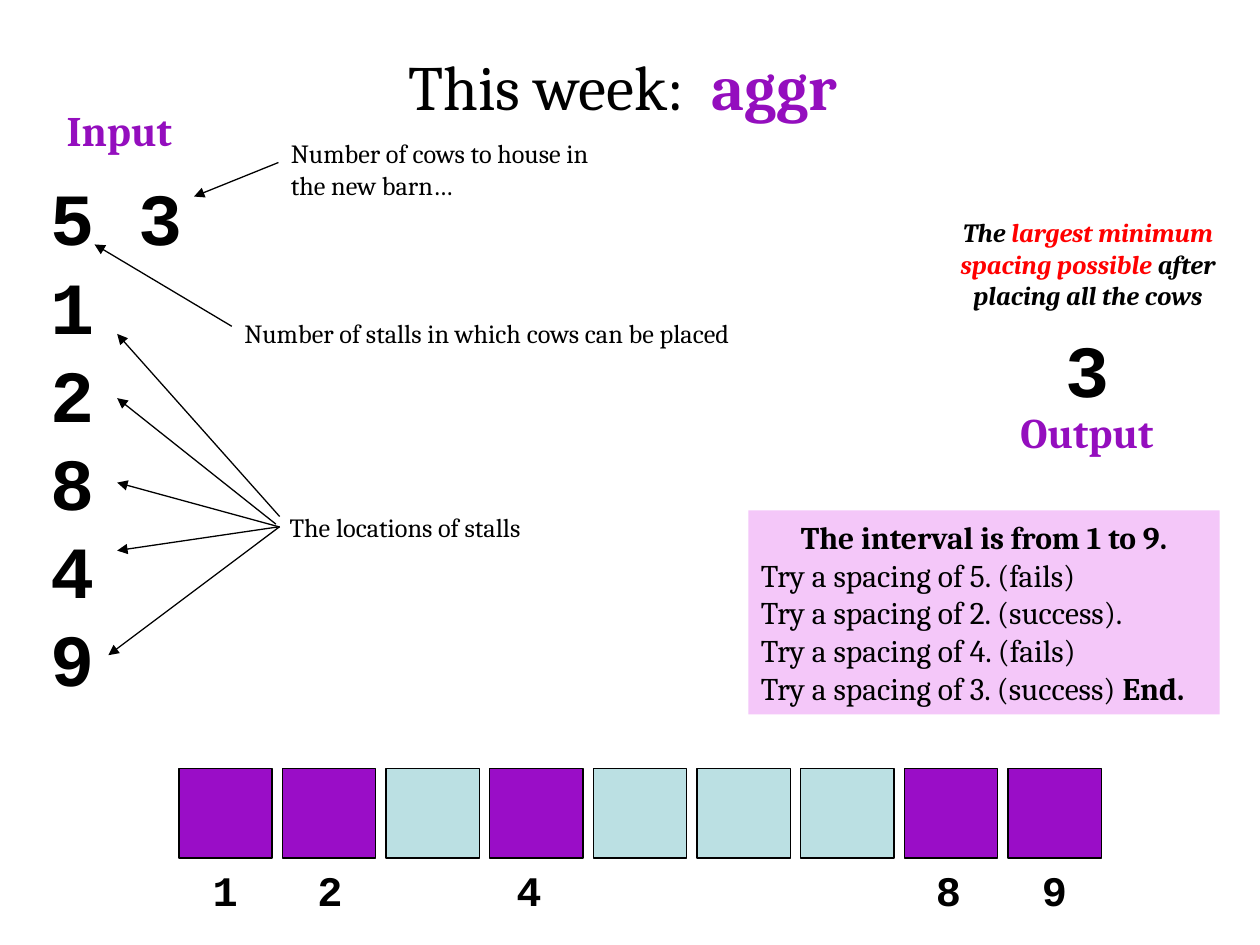
"""Build the slide that explains the aggr stall-spacing problem."""
from lxml import etree
from pptx import Presentation
from pptx.dml.color import RGBColor
from pptx.enum.shapes import MSO_CONNECTOR as Line, MSO_SHAPE as Shape
from pptx.enum.text import MSO_AUTO_SIZE as AutoSize, PP_ALIGN as Align
from pptx.oxml.ns import qn
from pptx.util import Inches, Pt

BLACK = RGBColor(0, 0, 0)
RED = RGBColor(0xFF, 0, 0)
PURPLE = RGBColor(0x94, 0x0E, 0xBE)
TAKEN = RGBColor(0x9A, 0x0D, 0xC7)
FREE = RGBColor(0xBB, 0xE0, 0xE3)
PINK = RGBColor(0xF4, 0xC7, 0xF9)

SERIF, MONO = "Cambria", "Courier New"
HEADING = dict(size=24, bold=True, color=PURPLE, wrap=False)
NUMBER = dict(size=42, bold=True, font=MONO, wrap=False)
STALL_NUMBER = dict(NUMBER, size=24)

TITLE = [["This week:  ", ("aggr", dict(bold=True, color=PURPLE))]]
INPUT = [[line] for line in ("5 3", "1", "2", "8", "4", "9")]
ANSWER = [["The ", ("largest minimum spacing possible ", dict(color=RED)),
           "after placing all the cows"]]
SEARCH = [
    [("The interval is from 1 to 9.", dict(bold=True))],
    ["Try a spacing of 5. (fails)"],
    ["Try a spacing of 2. (success)."],
    ["Try a spacing of 4. (fails)"],
    ["Try a spacing of 3. (success) ", ("End.", dict(bold=True))],
]
TEXTS = [
    (TITLE, (1.69, 0.33, 6.5, 0.7), dict(size=36, align=Align.CENTER)),
    ([["Input"]], (0.43, 0.78, 1.05, 0.5), HEADING),
    ([["Output"]], (8, 3.18, 1.29, 0.5), HEADING),
    (INPUT, (0.3, 1.32, 1.26, 4.34), NUMBER),
    ([["3"]], (8.36, 2.52, 0.55, 0.8), NUMBER),
    ([["Number of stalls in which cows can be placed"]],
     (1.84, 2.47, 4.35, 0.35), dict(wrap=False)),
    ([["The locations of stalls"]], (2.2, 4.01, 2.19, 0.35), dict(wrap=False)),
    ([["Number of cows to house in the new barn…"]], (2.21, 1.04, 2.76, 0.61), {}),
    (ANSWER, (7.45, 1.67, 2.37, 0.86),
     dict(bold=True, italic=True, align=Align.CENTER)),
]
ARROWS = [
    ((1.84, 2.59), (0.75, 1.94)),
    ((2.22, 4.1), (0.93, 2.65)),
    ((2.22, 4.18), (0.86, 5.2)),
    ((2.19, 4.16), (0.93, 3.16)),
    ((2.21, 4.18), (0.93, 3.83)),
    ((2.22, 4.18), (0.93, 4.37)),
    ((2.21, 1.29), (1.54, 1.56)),
]
STALL_COUNT = 9
FIRST_STALL, LAST_STALL, STALL_TOP = 1.42, 8, 6.1
STALL_WIDTH, STALL_HEIGHT = 0.74, 0.71
STALL_LABELS = {1: 1.59, 2: 2.42, 4: 4, 8: 7.33, 9: 8.17}

deck = Presentation()
deck.slide_width, deck.slide_height = Inches(10), Inches(7.5)
slide = deck.slides.add_slide(deck.slide_layouts[6])


def inches(values):
    return [Inches(value) for value in values]


def write(frame, paragraphs, size=15, font=SERIF, color=BLACK, bold=False,
          italic=False, align=Align.LEFT, wrap=True):
    frame.word_wrap = wrap
    frame.auto_size = AutoSize.SHAPE_TO_FIT_TEXT
    for index, pieces in enumerate(paragraphs):
        paragraph = frame.paragraphs[0] if index == 0 else frame.add_paragraph()
        paragraph.alignment = align
        for piece in pieces:
            words, change = (piece, {}) if isinstance(piece, str) else piece
            run = paragraph.add_run()
            run.text = words
            run.font.name, run.font.size = font, Pt(size)
            run.font.bold = change.get("bold", bold)
            run.font.italic = italic
            run.font.color.rgb = change.get("color", color)


def add_box(place, fill, outlined=True):
    box = slide.shapes.add_shape(Shape.RECTANGLE, *inches(place))
    box.shadow.inherit = False
    box.fill.solid()
    box.fill.fore_color.rgb = fill
    if outlined:
        box.line.color.rgb, box.line.width = BLACK, Pt(0.75)
    else:
        box.line.fill.background()
    return box


def add_arrow(start, end):
    arrow = slide.shapes.add_connector(Line.STRAIGHT, *inches(start + end))
    arrow.line.color.rgb, arrow.line.width = BLACK, Pt(0.75)
    outline = arrow.line._get_or_add_ln()
    etree.SubElement(outline, qn("a:tailEnd"), type="triangle")
    etree.SubElement(outline.getparent(), qn("a:effectLst"))


def add_text(paragraphs, place, **style):
    write(slide.shapes.add_textbox(*inches(place)).text_frame, paragraphs, **style)


for paragraphs, place, style in TEXTS:
    add_text(paragraphs, place, **style)

stall_step = (LAST_STALL - FIRST_STALL) / (STALL_COUNT - 1)
for stall in range(1, STALL_COUNT + 1):
    left = FIRST_STALL + (stall - 1) * stall_step
    add_box((left, STALL_TOP, STALL_WIDTH, STALL_HEIGHT),
            TAKEN if stall in STALL_LABELS else FREE)
for stall, left in STALL_LABELS.items():
    add_text([[str(stall)]], (left, STALL_TOP + STALL_HEIGHT, 0.4, 0.5), **STALL_NUMBER)

for start, end in ARROWS:
    add_arrow(start, end)

search = add_box((5.94, 4.05, 3.74, 1.62), PINK, outlined=False).text_frame
write(search, SEARCH, size=18)
search.paragraphs[0].alignment = Align.CENTER

deck.save("out.pptx")
